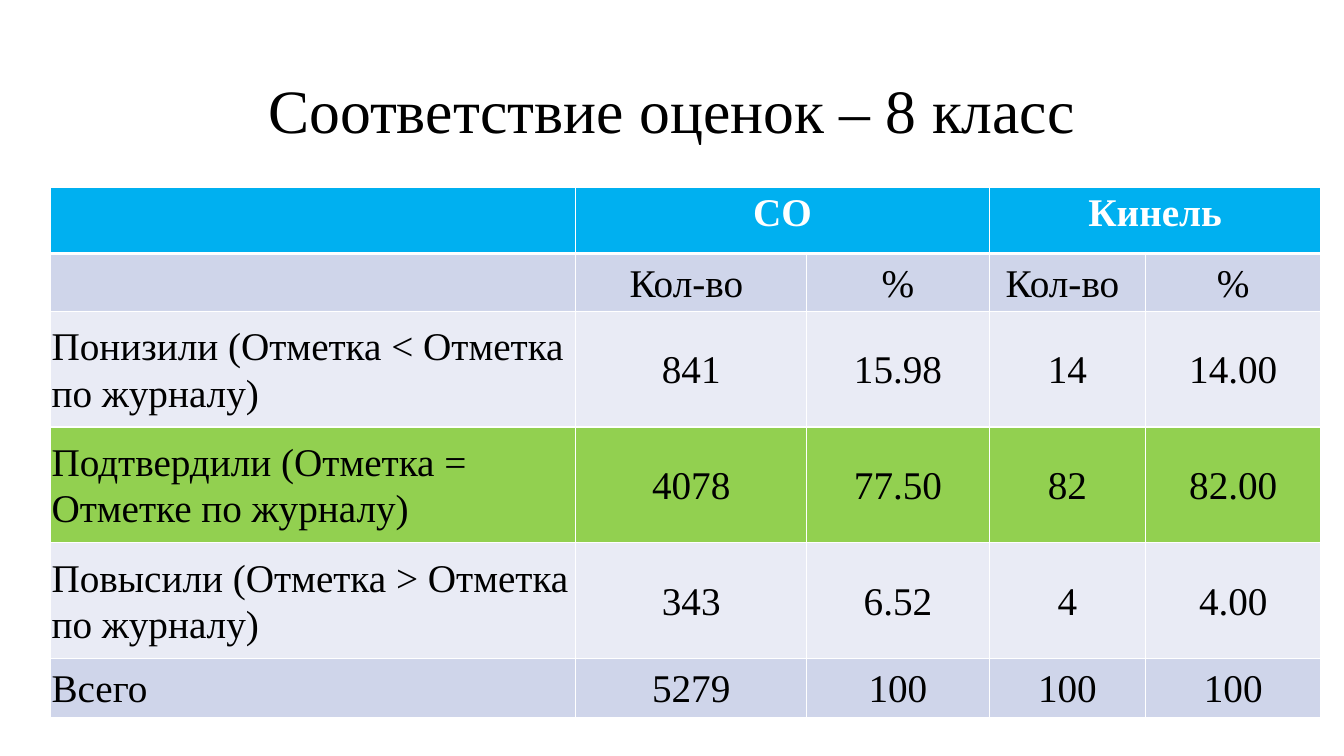
from dataclasses import dataclass

from lxml.etree import SubElement
from pptx import Presentation
from pptx.dml.color import RGBColor
from pptx.enum.text import MSO_ANCHOR as Anchor, PP_ALIGN as Align
from pptx.oxml.ns import qn
from pptx.util import Cm, Pt


@dataclass(frozen=True)
class Theme:
    font: str = "Times New Roman"
    title_size: int = 44
    table_size: int = 28
    text: str = "000000"
    white: str = "FFFFFF"
    header: str = "00B0F0"
    band_dark: str = "CFD5EA"
    band_light: str = "E9EBF5"
    confirmed: str = "92D050"


THEME = Theme()

TITLE = "Соответствие оценок – 8 класс"
COLUMN_WIDTHS = [13.23, 5.82, 4.6, 3.94, 4.42]
# Height, fill, texts
ROWS = [
    (1.68, THEME.header, ["", "СО", "", "Кинель", ""]),
    (1.45, THEME.band_dark, ["", "Кол-во ", "%", "Кол-во ", "%"]),
    (2.92, THEME.band_light,
     ["Понизили (Отметка < Отметка по журналу)", "841", "15.98", "14", "14.00"]),
    (2.92, THEME.confirmed,
     ["Подтвердили (Отметка = Отметке по журналу)", "4078", "77.50", "82", "82.00"]),
    (2.92, THEME.band_light,
     ["Повысили (Отметка > Отметка по журналу)", "343", "6.52", "4", "4.00"]),
    (1.47, THEME.band_dark, ["Всего", "5279", "100", "100", "100"]),
]


def add_text(para, text, size, color, bold=False):
    run = para.add_run()
    run.text = text
    run.font.name = THEME.font
    run.font.size = Pt(size)
    run.font.bold = bold
    run.font.color.rgb = RGBColor.from_string(color)


def add_title(page):
    title = page.shapes.title
    title.left, title.top = Cm(2.33), Cm(1.01)
    title.width, title.height = Cm(29.21), Cm(3.68)
    title.text_frame.vertical_anchor = Anchor.MIDDLE
    para = title.text_frame.paragraphs[0]
    para.alignment = Align.CENTER
    para.line_spacing = 0.9
    add_text(para, TITLE, THEME.title_size, THEME.text)


def set_borders(cell, top, bottom):
    properties = cell._tc.get_or_add_tcPr()
    for side, points in (("L", 1), ("R", 1), ("T", top), ("B", bottom)):
        line = SubElement(properties, qn(f"a:ln{side}"), w=str(Pt(points)))
        fill = SubElement(line, qn("a:solidFill"))
        SubElement(fill, qn("a:srgbClr"), val=THEME.white)


def format_cell(cell, fill, row, column, text):
    # The line under the header is thicker than the others
    set_borders(cell, top=3 if row == 1 else 1, bottom=3 if row == 0 else 1)
    cell.fill.solid()
    cell.fill.fore_color.rgb = RGBColor.from_string(fill)
    if not text:
        return
    para = cell.text_frame.paragraphs[0]
    para.alignment = Align.LEFT if column == 0 else Align.CENTER
    if row == 0:
        add_text(para, text, THEME.table_size, THEME.white, bold=True)
        return
    cell.vertical_anchor = Anchor.MIDDLE
    cell.margin_left = cell.margin_right = Cm(0.02)
    cell.margin_top = cell.margin_bottom = Cm(0.02)
    para.line_spacing = 1.07
    para.space_after = Pt(8)
    add_text(para, text, THEME.table_size, THEME.text)


def add_grades_table(page):
    width, height = sum(COLUMN_WIDTHS), sum(row[0] for row in ROWS)
    table = page.shapes.add_table(
        len(ROWS), len(COLUMN_WIDTHS), Cm(1.28), Cm(4.71), Cm(width), Cm(height)
    ).table
    for column, column_width in zip(table.columns, COLUMN_WIDTHS):
        column.width = Cm(column_width)
    # Each header spans a count and a percentage
    for first in (1, 3):
        table.cell(0, first).merge(table.cell(0, first + 1))
    for row, (row_height, fill, texts) in enumerate(ROWS):
        table.rows[row].height = Cm(row_height)
        for column, text in enumerate(texts):
            format_cell(table.cell(row, column), fill, row, column, text)


def main():
    deck = Presentation()
    deck.slide_width, deck.slide_height = Cm(33.87), Cm(19.05)
    page = deck.slides.add_slide(deck.slide_layouts.get_by_name("Title Only"))
    add_title(page)
    add_grades_table(page)
    deck.save("out.pptx")


if __name__ == "__main__":
    main()
